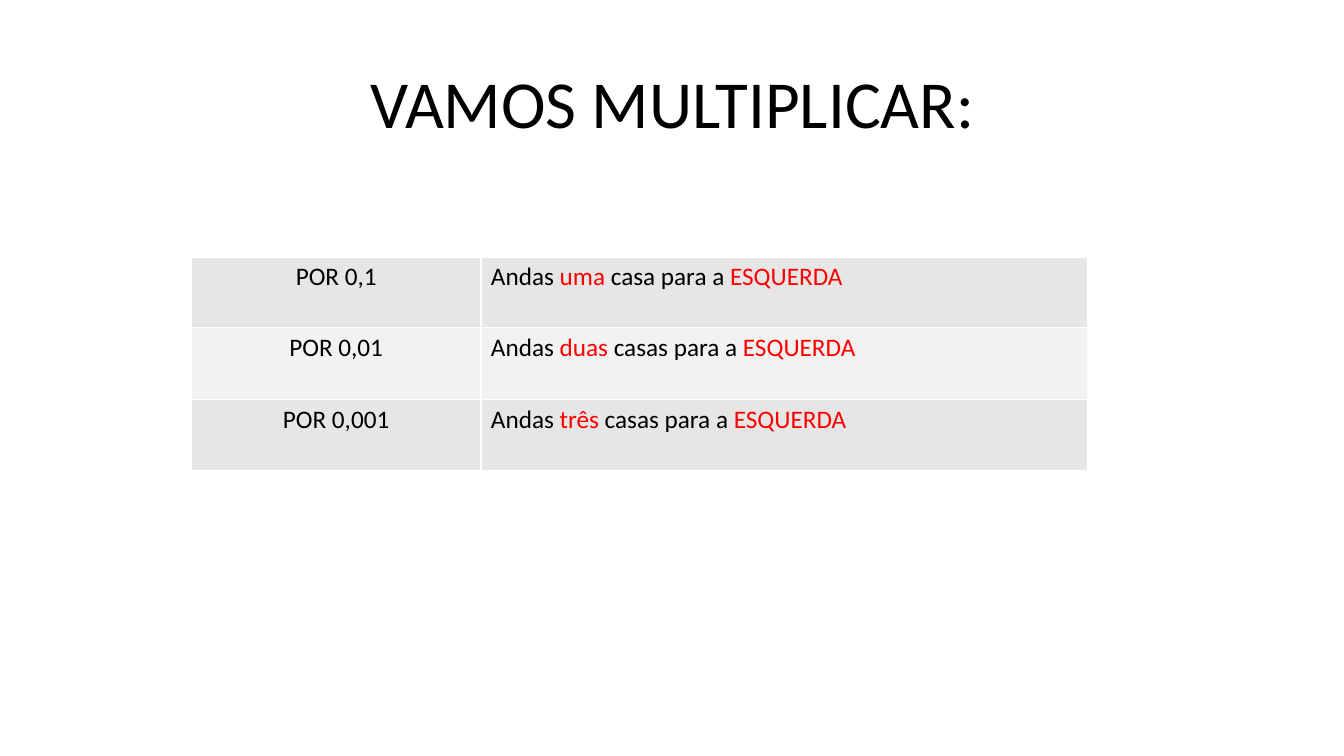
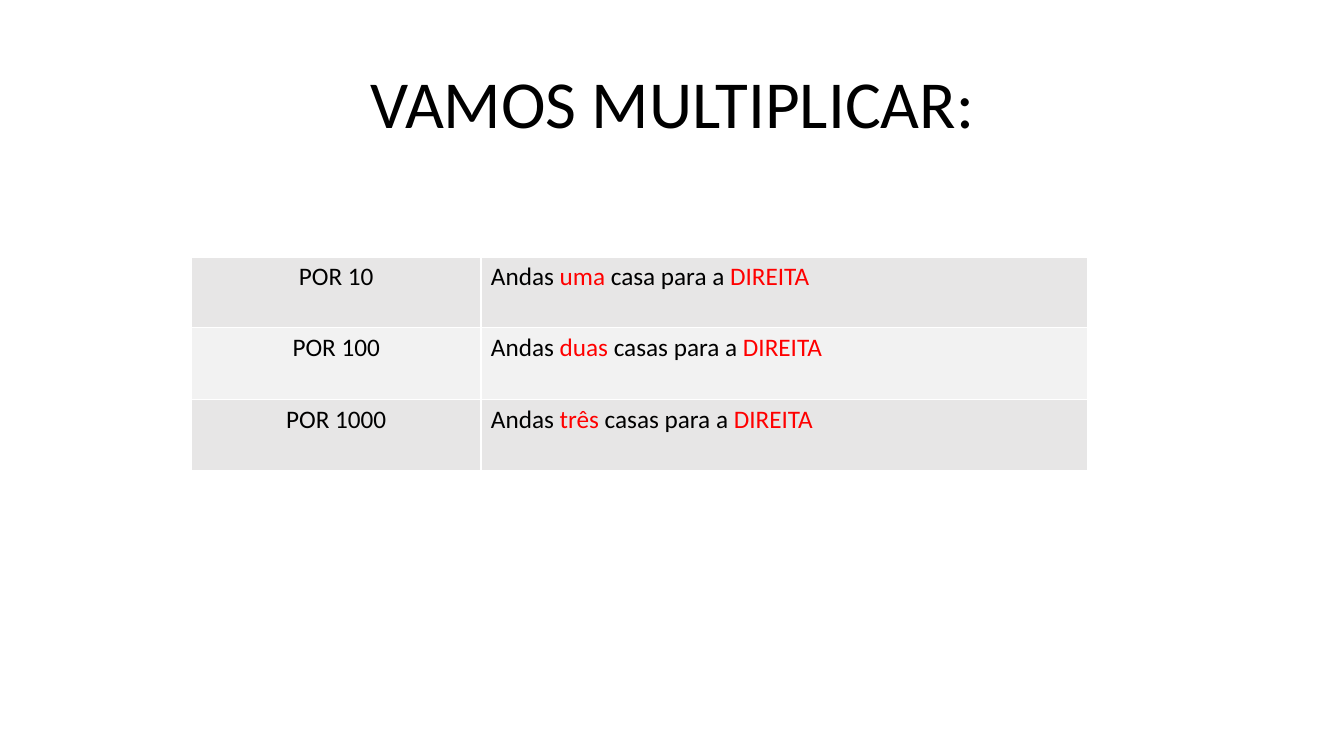
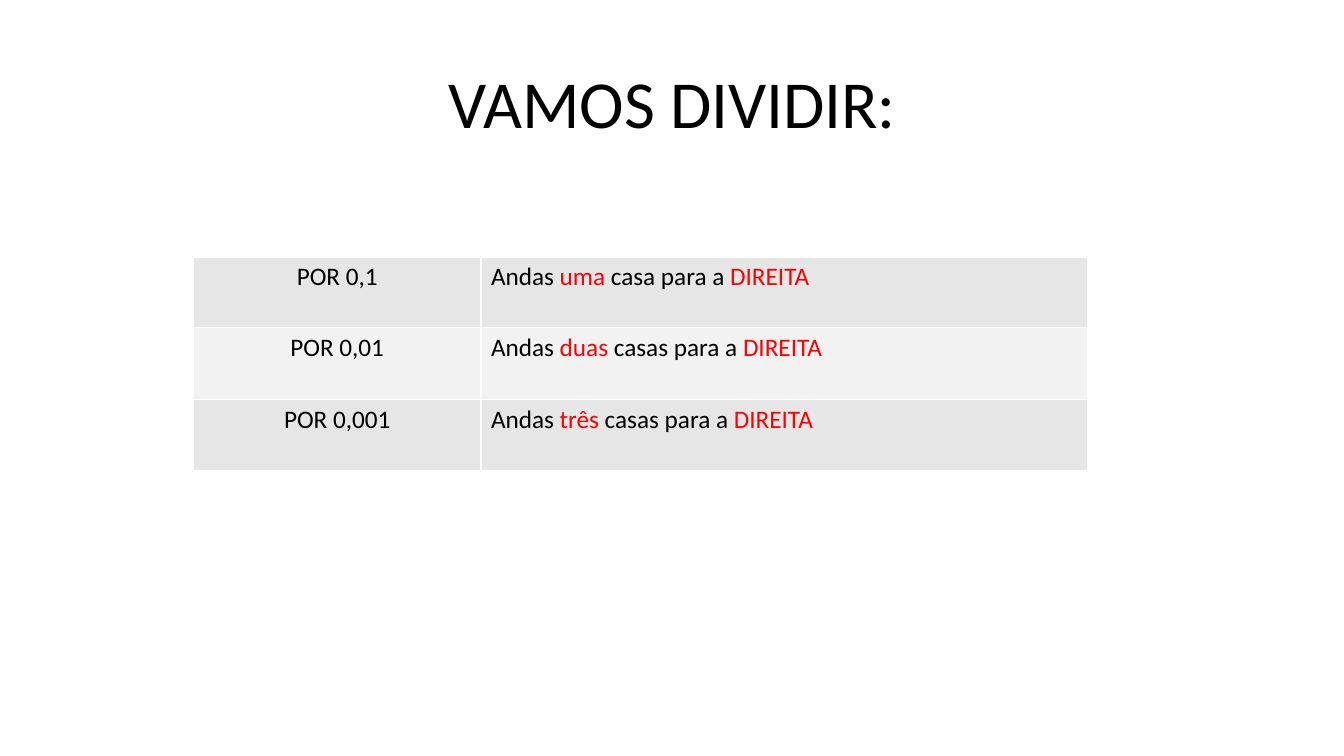
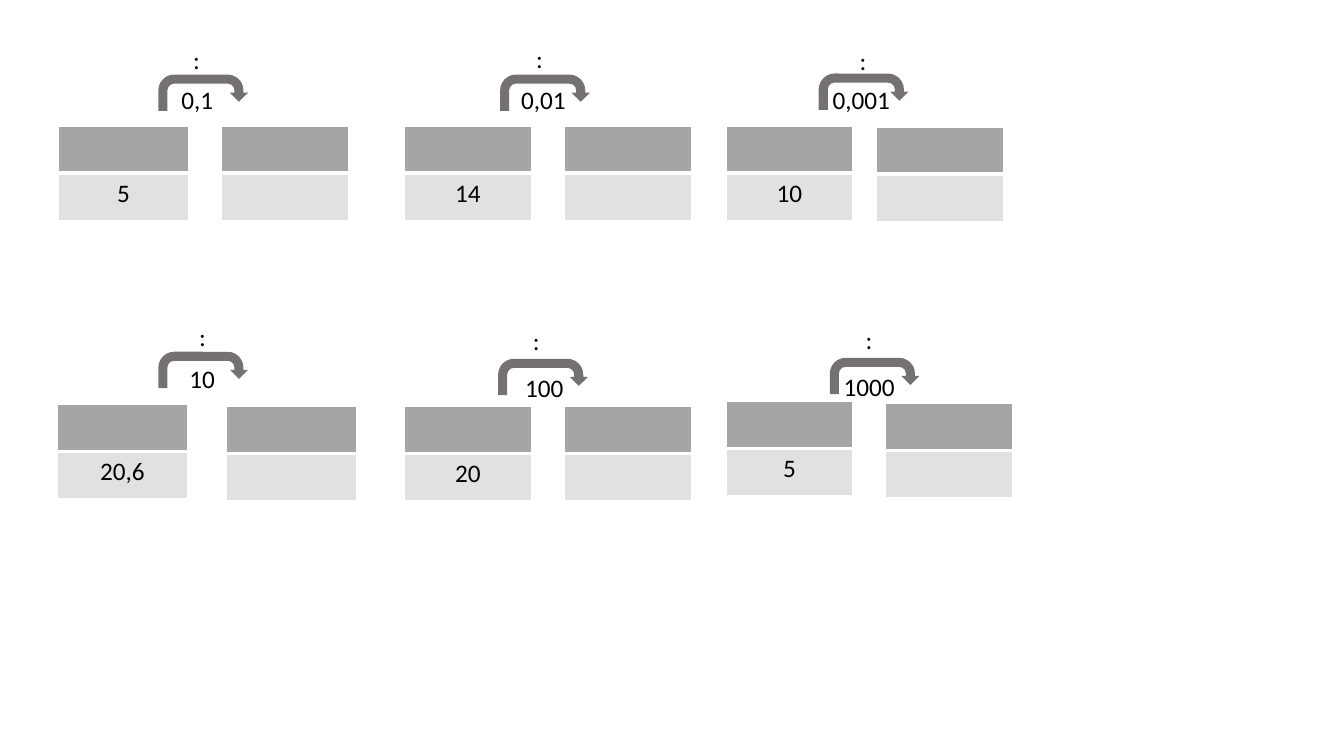
from lxml.etree import SubElement
from pptx import Presentation
from pptx.dml.color import RGBColor
from pptx.enum.shapes import MSO_SHAPE as Shape
from pptx.enum.text import MSO_ANCHOR as Anchor, MSO_AUTO_SIZE as AutoSize, PP_ALIGN as Align
from pptx.oxml.ns import qn
from pptx.util import Emu, Pt

BLACK, RED, WHITE = "000000", "FF0000", "FFFFFF"
ARROW_GREY, HEADER_GREY, ANSWER_GREY = "767171", "A5A5A5", "E1E1E1"
BANDS = ["E7E6E6", "F2F2F2"]
STEPS = ["uma| casa", "duas| casas", "três| casas"]
DECIMALS = ["0,1", "0,01", "0,001"]
POWERS = ["10", "100", "1000"]
RULES = [
    ("VAMOS MULTIPLICAR:", DECIMALS, "ESQUERDA", 190),
    ("VAMOS MULTIPLICAR:", POWERS, "DIREITA", 190),
    ("VAMOS DIVIDIR:", DECIMALS, "DIREITA", 192),
]
EXERCISES = [
    ("5", "0,1", (58, 125, 129), (220, 125, 126), (157, 74), (170, 79), (170, 39)),
    ("14", "0,01", (401, 125, 126), (560, 125, 126), (496, 74), (507, 79), (510, 38)),
    ("10", "0,001", (720, 125, 126), (869, 126, 126), (812, 73), (816, 79), (831, 40)),
    ("20,6", "10", (57, 401, 129), (225, 403, 129), (157, 349), (178, 356), (176, 314)),
    ("20", "100", (401, 403, 126), (560, 403, 126), (494, 356), (511, 364), (507, 318)),
    ("5", "1000", (720, 398, 126), (878, 400, 126), (823, 355), (827, 363), (837, 317)),
]


def px(length):
    return Emu(length * 9144)


def rgb(color):
    return RGBColor.from_string(color)


class Deck:
    """Holds the shared style and the current slide."""

    font = "Calibri"
    text_size = 18
    title_size = 48

    def __init__(self):
        self.presentation = Presentation()
        self.presentation.slide_width = px(1333)
        self.presentation.slide_height = px(750)

    def add_slide(self, title=None):
        layout = self.presentation.slide_layouts[5 if title else 6]
        self.slide = self.presentation.slides.add_slide(layout)
        if title:
            self.title(title)

    def place(self, shape, left, top, width, height):
        shape.left, shape.top = px(left), px(top)
        shape.width, shape.height = px(width), px(height)

    def format_run(self, run, size, color=BLACK):
        run.font.name = self.font
        run.font.size = Pt(size)
        run.font.color.rgb = rgb(color)

    def fill_text(self, frame, text, align=Align.LEFT):
        paragraph = frame.paragraphs[0]
        paragraph.alignment = align
        for index, part in enumerate(text.split("|")):
            run = paragraph.add_run()
            run.text = part
            self.format_run(run, self.text_size, RED if index % 2 else BLACK)

    def title(self, text):
        shape = self.slide.shapes.title
        self.place(shape, 92, 65, 1150, 610)
        frame = shape.text_frame
        frame.text = text
        frame.word_wrap = True
        frame.auto_size = AutoSize.NONE
        frame.vertical_anchor = Anchor.TOP
        paragraph = frame.paragraphs[0]
        paragraph.alignment = Align.CENTER
        paragraph.line_spacing = 0.9
        paragraph.space_before = Pt(10)
        self.format_run(paragraph.runs[0], self.title_size)

    def border(self, cell, side, width):
        properties = cell._tc.get_or_add_tcPr()
        line = SubElement(properties, qn(f"a:{side}"), w=str(Pt(width)))
        fill = SubElement(line, qn("a:solidFill"))
        SubElement(fill, qn("a:srgbClr"), val=WHITE)

    def table(self, left, top, widths, heights, texts, fills):
        table = self.slide.shapes.add_table(
            len(heights), len(widths), px(left), px(top), px(sum(widths)), px(sum(heights))
        ).table
        table.first_row = table.horz_banding = False
        for column, width in zip(table.columns, widths):
            column.width = px(width)
        for row_index, height in enumerate(heights):
            table.rows[row_index].height = px(height)
            for column_index, text in enumerate(texts[row_index]):
                cell = table.cell(row_index, column_index)
                self.border(cell, "lnL", 1)
                self.border(cell, "lnR", 1)
                self.border(cell, "lnT", 3 if row_index == 1 else 1)
                self.border(cell, "lnB", 3 if row_index == 0 else 1)
                cell.fill.solid()
                cell.fill.fore_color.rgb = rgb(fills[row_index])
                if text:
                    align = Align.LEFT if column_index else Align.CENTER
                    self.fill_text(cell.text_frame, text, align)

    def number_box(self, left, top, width, text=""):
        self.table(left, top, [width], [47, 47], [[""], [text]], [HEADER_GREY, ANSWER_GREY])

    def arrow(self, left, top):
        shape = self.slide.shapes.add_shape(Shape.U_TURN_ARROW, px(left), px(top), px(89), px(36))
        shape.shadow.inherit = False
        shape.fill.solid()
        shape.fill.fore_color.rgb = rgb(ARROW_GREY)
        shape.line.fill.background()

    def label(self, left, top, width, text, align=Align.LEFT):
        shape = self.slide.shapes.add_textbox(px(left), px(top), px(width), px(40))
        frame = shape.text_frame
        frame.word_wrap = True
        frame.auto_size = AutoSize.SHAPE_TO_FIT_TEXT
        self.fill_text(frame, text, align)


def main():
    deck = Deck()
    for title, factors, direction, left in RULES:
        deck.add_slide(title)
        rows = [["", ""]]
        for factor, step in zip(factors, STEPS):
            rows.append([f"POR {factor}", f"Andas |{step} para a |{direction}"])
        fills = [WHITE, BANDS[0], BANDS[1], BANDS[0]]
        deck.table(left, 213, [477 - left, 602], [41, 71, 71, 71], rows, fills)

    deck.add_slide()
    for number, divisor, source, result, arrow, divisor_at, sign_at in EXERCISES:
        deck.number_box(*source, number)
        deck.number_box(*result)
        deck.arrow(*arrow)
        deck.label(*divisor_at, 107, divisor)
        deck.label(*sign_at, 50, ":", Align.CENTER)

    deck.presentation.save("out.pptx")


if __name__ == "__main__":
    main()
